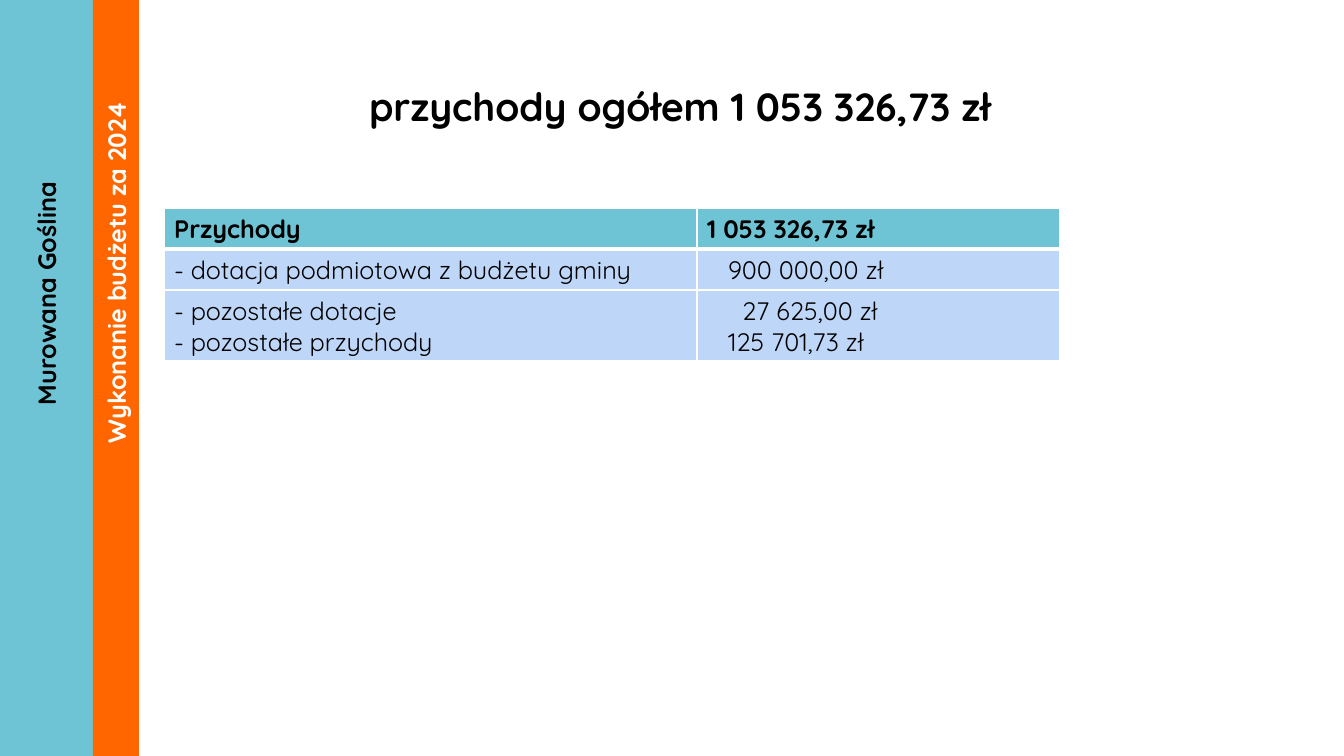
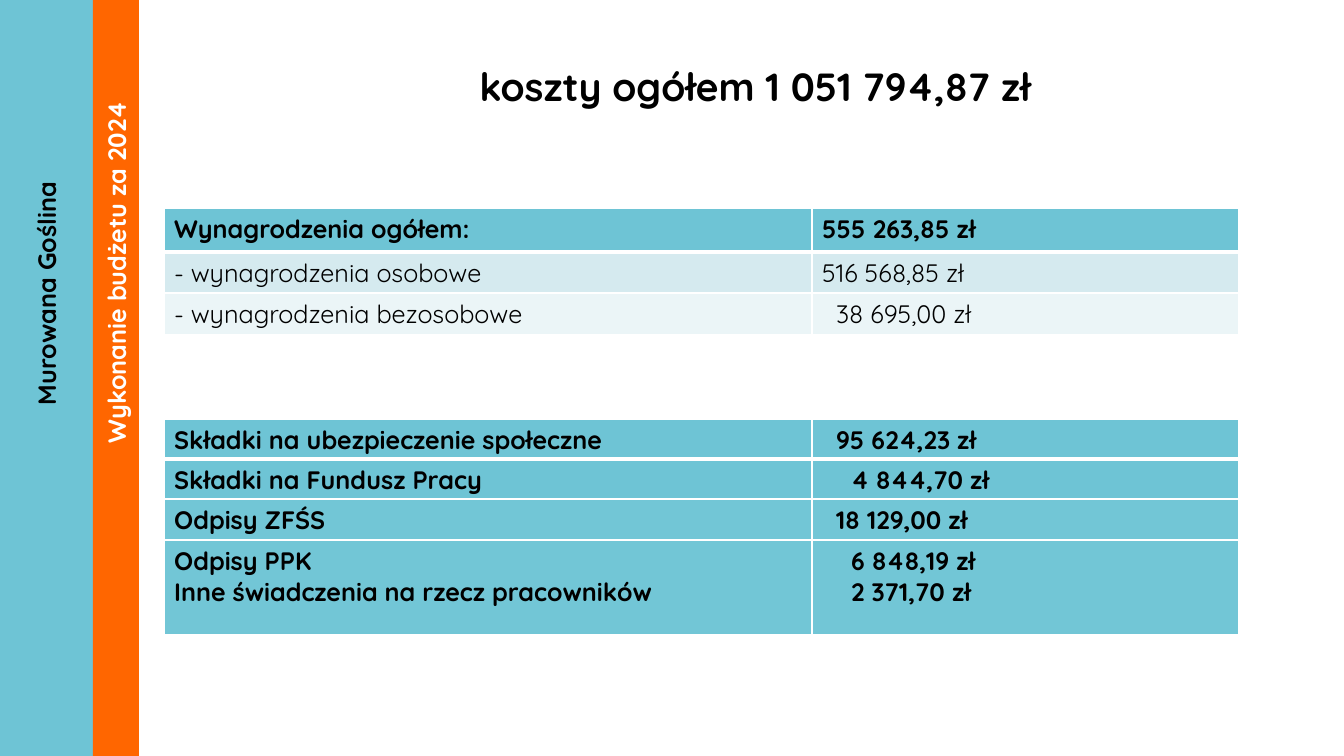
from dataclasses import dataclass

import lxml.etree
import pptx
import pptx.dml.color
import pptx.enum.shapes
import pptx.enum.text
import pptx.oxml.ns
import pptx.util

EMU_PER_PX = 914400 / 100.8
FONT = "Quicksand"
TEAL, SOFT_TEAL, ORANGE = "6EC4D5", "72C6D6", "FF6600"
BLUE, PALE, PALEST = "BED6F8", "D5EAEF", "EBF5F7"
BLACK, WHITE = "000000", "FFFFFF"
BODY_SIZE, TITLE_SIZE = 18, 28
TABLE_LEFT = 164


@dataclass(frozen=True)
class Box:
    left: int
    top: int
    width: int
    height: int


@dataclass(frozen=True)
class Band:
    box: Box
    fill: str
    label: str
    label_box: Box
    label_color: str
    anchor: pptx.enum.text.MSO_ANCHOR


@dataclass(frozen=True)
class Line:
    label: str
    amount: str
    indent: int = 0


@dataclass(frozen=True)
class Row:
    height: int
    fill: str | None = None
    bold: bool = False
    lines: tuple[Line, ...] = (Line("", ""),)


@dataclass(frozen=True)
class BudgetTable:
    top: int
    columns: tuple[int, int]
    rows: tuple[Row, ...]


@dataclass(frozen=True)
class BudgetSlide:
    title: str
    title_box: Box
    tables: tuple[BudgetTable, ...]


BANDS = (
    Band(Box(0, 0, 93, 756), TEAL, "Murowana Goślina",
         Box(-81, 268, 254, 40), BLACK, pptx.enum.text.MSO_ANCHOR.TOP),
    Band(Box(93, 0, 46, 756), ORANGE, "Wykonanie budżetu za 2024",
         Box(-91, 226, 414, 40), WHITE, pptx.enum.text.MSO_ANCHOR.MIDDLE),
)

COST_COLUMNS = (648, 427)
SLIDES = (
    BudgetSlide("przychody ogółem 1 053 326,73 zł", Box(248, 77, 864, 59), (
        BudgetTable(208, (533, 363), (
            Row(41, TEAL, True, (Line("Przychody", "1 053 326,73 zł"),)),
            Row(41, BLUE, False, (
                Line("- dotacja podmiotowa z budżetu gminy", "900 000,00 zł", 21),)),
            Row(71, BLUE, False, (
                Line("- pozostałe dotacje", "27 625,00 zł", 35),
                Line("- pozostałe przychody", "125 701,73 zł", 21))),
        )),
    )),
    BudgetSlide("koszty ogółem 1 051 794,87 zł", Box(323, 57, 864, 59), (
        BudgetTable(208, COST_COLUMNS, (
            Row(44, TEAL, True, (Line("Wynagrodzenia ogółem:", "555 263,85 zł"),)),
            Row(41, PALE, False, (Line("- wynagrodzenia osobowe", "516 568,85 zł"),)),
            Row(42, PALEST, False, (
                Line("- wynagrodzenia bezosobowe", "38 695,00 zł", 14),)),
            Row(41),
            Row(41),
        )),
        BudgetTable(419, COST_COLUMNS, (
            Row(40, TEAL, True, (
                Line("Składki na ubezpieczenie społeczne", "95 624,23 zł", 14),)),
            Row(40, TEAL, True, (Line("Składki na Fundusz Pracy", "4 844,70 zł", 29),)),
            Row(41, SOFT_TEAL, True, (Line("Odpisy ZFŚS", "18 129,00 zł", 14),)),
            Row(95, SOFT_TEAL, True, (
                Line("Odpisy PPK", "6 848,19 zł", 29),
                Line("Inne świadczenia na rzecz pracowników", "2 371,70 zł", 29))),
        )),
    )),
)


def px(length: int) -> pptx.util.Emu:
    return pptx.util.Emu(round(length * EMU_PER_PX))


def place(box: Box) -> tuple[pptx.util.Emu, ...]:
    return px(box.left), px(box.top), px(box.width), px(box.height)


def color(value: str) -> pptx.dml.color.RGBColor:
    return pptx.dml.color.RGBColor.from_string(value)


def style_paragraph(paragraph, size: int, bold: bool, text_color: str) -> None:
    paragraph.font.name = FONT
    paragraph.font.size = pptx.util.Pt(size)
    paragraph.font.bold = bold
    paragraph.font.color.rgb = color(text_color)


def add_text(slide, box: Box, text: str, size: int, text_color: str):
    shape = slide.shapes.add_textbox(*place(box))
    shape.text_frame.word_wrap = True
    paragraph = shape.text_frame.paragraphs[0]
    paragraph.text = text
    style_paragraph(paragraph, size, True, text_color)
    return shape


def add_band(slide, band: Band) -> None:
    shape = slide.shapes.add_shape(
        pptx.enum.shapes.MSO_SHAPE.RECTANGLE, *place(band.box))
    shape.shadow.inherit = False
    shape.fill.solid()
    shape.fill.fore_color.rgb = color(band.fill)
    shape.line.fill.background()
    label = add_text(slide, band.label_box, band.label, BODY_SIZE, band.label_color)
    label.rotation = 270
    label.text_frame.vertical_anchor = band.anchor


def add_title(slide, title: str, box: Box) -> None:
    shape = add_text(slide, box, title, TITLE_SIZE, BLACK)
    shape.text_frame.paragraphs[0].alignment = pptx.enum.text.PP_ALIGN.CENTER


def set_borders(cell, top: int, bottom: int) -> None:
    properties = cell._tc.get_or_add_tcPr()
    for side, width in (("L", 1), ("R", 1), ("T", top), ("B", bottom)):
        line = lxml.etree.SubElement(
            properties, pptx.oxml.ns.qn(f"a:ln{side}"), w=str(pptx.util.Pt(width)))
        fill = lxml.etree.SubElement(line, pptx.oxml.ns.qn("a:solidFill"))
        lxml.etree.SubElement(fill, pptx.oxml.ns.qn("a:srgbClr"), val=WHITE)


def fill_cell(cell, row: Row, texts: list[str], indents: list[int]) -> None:
    cell.margin_bottom = 0
    if row.fill is None:
        cell.fill.background()
    else:
        cell.fill.solid()
        cell.fill.fore_color.rgb = color(row.fill)
    cell.text = "\n".join(texts)
    for paragraph, indent in zip(cell.text_frame.paragraphs, indents):
        if indent:
            paragraph._p.get_or_add_pPr().set("marL", str(px(indent)))
        style_paragraph(paragraph, BODY_SIZE, row.bold, BLACK)


def add_budget_table(slide, budget: BudgetTable) -> None:
    box = Box(TABLE_LEFT, budget.top, sum(budget.columns),
              sum(row.height for row in budget.rows))
    table = slide.shapes.add_table(
        len(budget.rows), len(budget.columns), *place(box)).table
    table.horz_banding = False
    for column, width in zip(table.columns, budget.columns):
        column.width = px(width)
    for index, row in enumerate(budget.rows):
        table.rows[index].height = px(row.height)
        label, amount = table.cell(index, 0), table.cell(index, 1)
        for cell in (label, amount):
            set_borders(cell, 3 if index == 1 else 1, 3 if index == 0 else 1)
        fill_cell(label, row, [line.label for line in row.lines], [0] * len(row.lines))
        fill_cell(amount, row, [line.amount for line in row.lines],
                  [line.indent for line in row.lines])


def add_budget_slide(presentation, content: BudgetSlide) -> None:
    slide = presentation.slides.add_slide(presentation.slide_layouts[6])
    for band in BANDS:
        add_band(slide, band)
    add_title(slide, content.title, content.title_box)
    for budget in content.tables:
        add_budget_table(slide, budget)


def main() -> None:
    presentation = pptx.Presentation()
    presentation.slide_width = px(1344)
    presentation.slide_height = px(756)
    for content in SLIDES:
        add_budget_slide(presentation, content)
    presentation.save("out.pptx")


if __name__ == "__main__":
    main()
